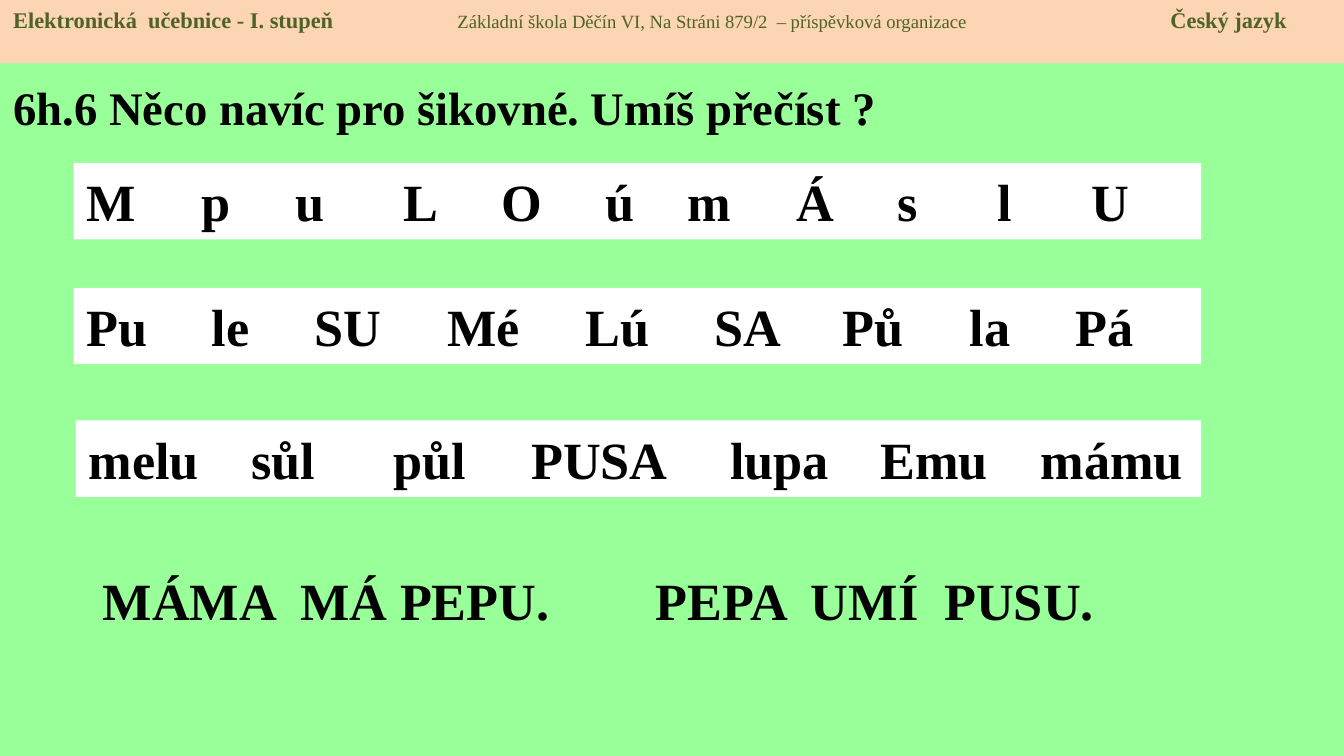
import pptx
import pptx.util
import pptx.dml.color
import pptx.enum.shapes
import pptx.enum.text
import pptx.oxml.ns
import lxml.etree

Pt = pptx.util.Pt
ANCHOR = pptx.enum.text.MSO_ANCHOR
COLOURS = {
    "page": "99FF99",
    "header": "FCD5B5",
    "header text": "4F6228",
    "card": "FFFFFF",
    "text": "000000",
}


class ReadingPage:
    """Holds the style and the current slide."""

    font = "Times New Roman"
    size = 28

    def __init__(self, deck):
        self.page = deck.slides.add_slide(deck.slide_layouts[5])
        self.paint(self.page.background.fill, "page")

    def paint(self, fill, colour):
        fill.solid()
        fill.fore_color.rgb = pptx.dml.color.RGBColor.from_string(COLOURS[colour])

    def add_text(self, box, spans, colour="text", stops=(), anchor=ANCHOR.TOP):
        """Put (text, size, bold) spans into a left-aligned paragraph."""
        frame = box.text_frame
        frame.word_wrap = True
        frame.auto_size = pptx.enum.text.MSO_AUTO_SIZE.NONE
        frame.vertical_anchor = anchor
        para = frame.paragraphs[0]
        para.alignment = pptx.enum.text.PP_ALIGN.LEFT
        if stops:
            qn = pptx.oxml.ns.qn
            tabs = lxml.etree.SubElement(para._p.get_or_add_pPr(), qn("a:tabLst"))
            for stop in stops:
                lxml.etree.SubElement(tabs, qn("a:tab"), pos=str(Pt(stop)), algn="l")
        for text, size, bold in spans:
            span = para.add_run()
            span.text = text
            span.font.name = self.font
            span.font.size = Pt(size)
            span.font.bold = bold
            self.paint(span.font.fill, colour)

    def title(self, text, left, top, width, height):
        box = self.page.shapes.title
        box.left, box.top, box.width, box.height = map(Pt, (left, top, width, height))
        self.add_text(box, [(text, 25, True)], anchor=ANCHOR.MIDDLE)

    def band(self, spans, left, top, width, height, fill, colour="text", stops=()):
        box = self.page.shapes.add_shape(
            pptx.enum.shapes.MSO_SHAPE.RECTANGLE, *map(Pt, (left, top, width, height)))
        box.shadow.inherit = False
        self.paint(box.fill, fill)
        box.line.fill.background()
        self.add_text(box, spans, colour, stops)

    def card(self, words, stops, left, top, width):
        self.band([("\t".join(words), self.size, True)], left, top, width, 41,
                  "card", stops=stops)

    def sentence(self, text, left, top, width):
        box = self.page.shapes.add_textbox(*map(Pt, (left, top, width, 41)))
        self.add_text(box, [(text, self.size, True)])


def main():
    deck = pptx.Presentation()
    deck.slide_width, deck.slide_height = Pt(720), Pt(405)
    sheet = ReadingPage(deck)

    # Title and header band
    sheet.title("6h.6 Něco navíc pro šikovné. Umíš přečíst ?", 0, 34, 598, 47)
    sheet.band(
        [("Elektronická  učebnice - I. stupeň\t", 12, True),
         ("Základní škola Děčín VI, Na Stráni 879/2  – příspěvková organizace\t", 10, False),
         ("Český jazyk", 12, True)],
        0, 0, 720, 34, "header", "header text", stops=(238, 620))

    # Letters, syllables and words to read
    sheet.card(["M", "p", "u", "L", "O", "ú", "m", "Á", "s", "l", "U"],
               (61.5, 112, 169.5, 222, 278, 322, 380, 434.5, 488, 538),
               39.5, 87.3, 604)
    sheet.card(["Pu", "le", "SU", "Mé", "Lú", "SA", "Pů", "la", "Pá"],
               (67, 122, 193, 267, 336, 405, 473, 529.5),
               39.5, 154.2, 604)
    sheet.card(["melu", "sůl", "půl", "PUSA", "lupa", "Emu", "mámu"],
               (87, 163, 237, 343.5, 424, 510),
               40.5, 225.2, 603)

    # Sentences
    sheet.sentence("MÁMA  MÁ PEPU.", 48, 301, 264)
    sheet.sentence("PEPA  UMÍ  PUSU.", 344, 301, 284)

    deck.save("out.pptx")


if __name__ == "__main__":
    main()
